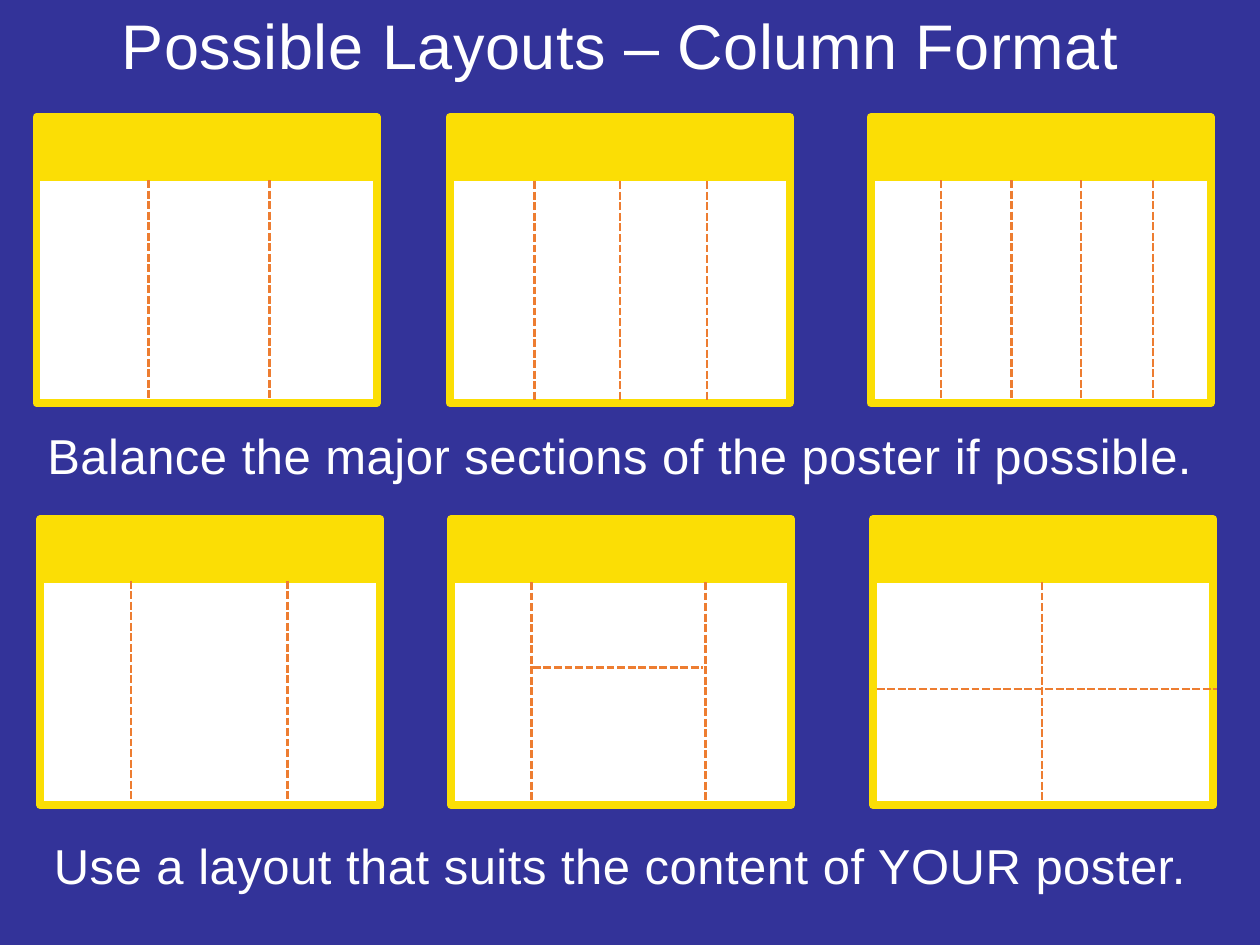
from pptx import Presentation
from pptx import util as u
from pptx.dml.color import RGBColor
from pptx.enum import dml, shapes, text
from pptx.oxml import xmlchemy

THEME = {
    "background": RGBColor.from_string("333399"),
    "text": RGBColor.from_string("FFFFFF"),
    "paper": RGBColor.from_string("FFFFFF"),
    "banner": RGBColor.from_string("FBDE05"),
    "divider": RGBColor.from_string("ED7D31"),
    "font": "Arial",
    "title_size": 36,
    "caption_size": 28,
    "letter_spacing": "30",  # hundredths of a point
}

# Wording, box (left, top, width, height) and type size
TEXTS = [
    ("Possible Layouts – Column Format",
     (0.32, 0, 9.21, 0.71), THEME["title_size"]),
    ("Balance the major sections of the poster if possible.",
     (0.16, 3.33, 9.53, 0.57), THEME["caption_size"]),
    ("Use a layout that suits the content of YOUR poster.",
     (0.32, 6.58, 9.21, 1.04), THEME["caption_size"]),
]

# Each poster: frame left, banner left, column dividers (x),
# top of the dividers, row divider (x from, x to, y)
POSTER_ROWS = [
    (0.93, [
        (0.29, 0.30, [1.18, 2.14], 1.43, None),
        (3.57, 3.56, [4.24, 4.92, 5.61], 1.44, None),
        (6.91, 6.92, [7.47, 8.03, 8.58, 9.15], 1.43, None),
    ]),
    (4.12, [
        (0.32, 0.34, [1.04, 2.28], 4.61, None),
        (3.58, 3.58, [4.22, 5.60], 4.62, (4.23, 5.58, 5.30)),
        (6.93, 6.93, [8.27], 4.62, (6.96, 9.66, 5.47)),
    ]),
]
POSTER_WIDTH, POSTER_HEIGHT, BANNER_HEIGHT = 2.7, 2.27, 0.5
DIVIDER_LENGTH = 1.75

prs = Presentation()
prs.slide_width, prs.slide_height = u.Inches(10), u.Inches(7.5)
slide = prs.slides.add_slide(prs.slide_layouts[6])
slide.background.fill.solid()
slide.background.fill.fore_color.rgb = THEME["background"]


def add_panel(left, top, height, fill, line_width):
    panel = slide.shapes.add_shape(
        shapes.MSO_SHAPE.RECTANGLE, u.Inches(left), u.Inches(top),
        u.Inches(POSTER_WIDTH), u.Inches(height))
    panel.shadow.inherit = False
    panel.fill.solid()
    panel.fill.fore_color.rgb = fill
    panel.line.color.rgb = THEME["banner"]
    panel.line.width = u.Pt(line_width)


def add_divider(x1, y1, x2, y2):
    divider = slide.shapes.add_connector(
        shapes.MSO_CONNECTOR.STRAIGHT,
        u.Inches(x1), u.Inches(y1), u.Inches(x2), u.Inches(y2))
    divider.line.color.rgb = THEME["divider"]
    divider.line.width = u.Pt(1.5)
    divider.line.dash_style = dml.MSO_LINE.SQUARE_DOT
    spPr = divider._element.spPr
    spPr.append(xmlchemy.OxmlElement("a:effectLst"))


def add_text(wording, box, size):
    textbox = slide.shapes.add_textbox(*map(u.Inches, box))
    frame = textbox.text_frame
    frame.word_wrap = True
    frame.auto_size = text.MSO_AUTO_SIZE.SHAPE_TO_FIT_TEXT
    paragraph = frame.paragraphs[0]
    paragraph.alignment = text.PP_ALIGN.CENTER
    paragraph.space_before = u.Pt(6)
    paragraph.font.name = THEME["font"]
    paragraph.font.size = u.Pt(size)
    paragraph.font.color.rgb = THEME["text"]
    run = paragraph.add_run()
    run.text = wording
    run._r.get_or_add_rPr().set("spc", THEME["letter_spacing"])


# Posters: white frame, yellow banner, dashed dividers
for top, posters in POSTER_ROWS:
    for frame_left, banner_left, columns, divider_top, row in posters:
        add_panel(frame_left, top, POSTER_HEIGHT, THEME["paper"], 4.5)
        add_panel(banner_left, top, BANNER_HEIGHT, THEME["banner"], 1)
        for x in columns:
            add_divider(x, divider_top, x, divider_top + DIVIDER_LENGTH)
        if row:
            start, end, y = row
            add_divider(start, y, end, y)

# Title and captions
for wording, box, size in TEXTS:
    add_text(wording, box, size)

prs.save("out.pptx")
